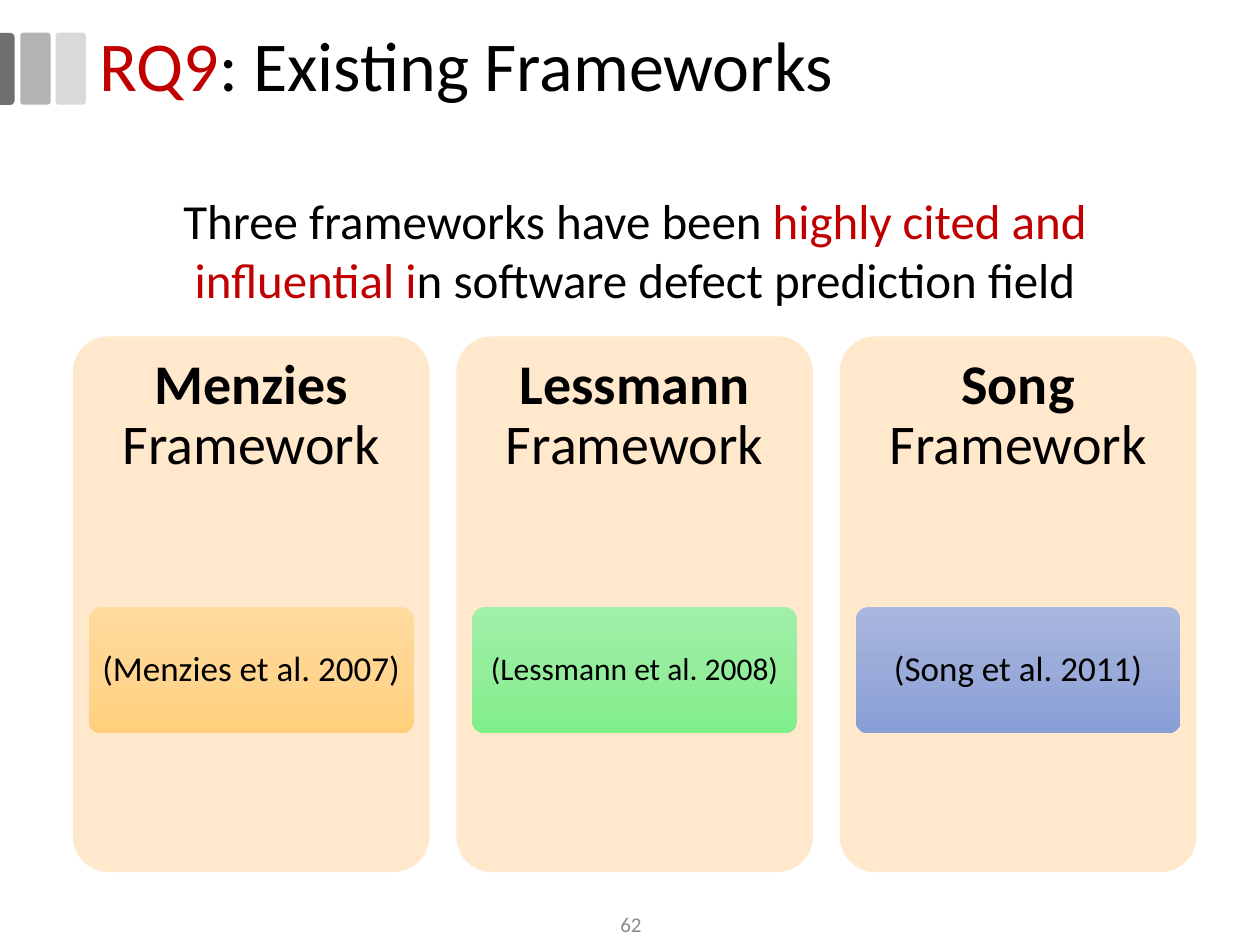
import copy

import pptx
import pptx.util
import pptx.dml.color
import pptx.enum.shapes
import pptx.enum.text
import pptx.oxml.ns

Cm = pptx.util.Cm
Pt = pptx.util.Pt
RGBColor = pptx.dml.color.RGBColor
SHAPE = pptx.enum.shapes.MSO_SHAPE
ALIGN = pptx.enum.text.PP_ALIGN
ANCHOR = pptx.enum.text.MSO_ANCHOR

FONT = "Calibri"
BLACK = RGBColor(0x00, 0x00, 0x00)
RED = RGBColor(0xC0, 0x00, 0x00)
PAGE_GREY = RGBColor(0x8C, 0x8C, 0x8C)
LIGHT_GREY = RGBColor(0xD9, 0xD9, 0xD9)
MID_GREY = RGBColor(0xB3, 0xB3, 0xB3)
DARK_GREY = RGBColor(0x70, 0x70, 0x70)
CREAM = RGBColor(0xFF, 0xE8, 0xCC)
ORANGES = [RGBColor(0xFF, 0xDB, 0x9E), RGBColor(0xFF, 0xD5, 0x90), RGBColor(0xFF, 0xD0, 0x7C)]
GREENS = [RGBColor(0xA1, 0xF0, 0xA9), RGBColor(0x93, 0xED, 0x9B), RGBColor(0x7F, 0xEF, 0x89)]
BLUES = [RGBColor(0xA8, 0xB7, 0xDF), RGBColor(0x9A, 0xAB, 0xD9), RGBColor(0x88, 0x9E, 0xD7)]

# Author, citation, citation size, gradient
FRAMEWORKS = [
    ("Menzies", "(Menzies et al. 2007)", 20, ORANGES),
    ("Lessmann", "(Lessmann et al. 2008)", 18, GREENS),
    ("Song", "(Song et al. 2011)", 20, BLUES),
]
CARD_LEFT, CARD_TOP, CARD_WIDTH, CARD_HEIGHT = 1.47, 6.78, 7.19, 10.8
CARD_PITCH = 7.73
CITATION_INSET, CITATION_TOP, CITATION_HEIGHT = 0.32, 12.24, 2.54


def add_block(slide, preset, left, top, width, height, adjustments, color=None):
    """Add a borderless preset shape, filled if a colour is given."""
    block = slide.shapes.add_shape(preset, Cm(left), Cm(top), Cm(width), Cm(height))
    block.shadow.inherit = False
    block.line.fill.background()
    for index, value in enumerate(adjustments):
        block.adjustments[index] = value
    if color is not None:
        block.fill.solid()
        block.fill.fore_color.rgb = color
    return block


def fill_gradient(block, colors):
    """Fill from top to bottom through three evenly spaced colours."""
    block.fill.gradient()
    block.fill.gradient_angle = 270
    first_stop = block._element.spPr.find(".//" + pptx.oxml.ns.qn("a:gs"))
    first_stop.addnext(copy.deepcopy(first_stop))
    for index, (stop, color) in enumerate(zip(block.fill.gradient_stops, colors)):
        stop.position = index / 2
        stop.color.rgb = color


def write_text(holder, runs, size, align=ALIGN.CENTER, anchor=ANCHOR.MIDDLE,
               spacing=None, insets=(0.25, 0.13)):
    """Write one paragraph; each run is (text, colour, bold)."""
    frame = holder.text_frame
    frame.word_wrap = True
    frame.auto_size = pptx.enum.text.MSO_AUTO_SIZE.NONE
    frame.vertical_anchor = anchor
    frame.margin_left = frame.margin_right = Cm(insets[0])
    frame.margin_top = frame.margin_bottom = Cm(insets[1])
    paragraph = frame.paragraphs[0]
    paragraph.alignment = align
    paragraph.line_spacing = spacing
    paragraph.font.name = FONT
    paragraph.font.size = Pt(size)
    for text, color, bold in runs:
        run = paragraph.add_run()
        run.text = text
        run.font.color.rgb = color
        run.font.bold = bold


def add_label(slide, left, top, width, height, runs, size, **layout):
    label = slide.shapes.add_textbox(Cm(left), Cm(top), Cm(width), Cm(height))
    write_text(label, runs, size, **layout)


def add_title_bars(slide):
    for left, color in ((1.12, LIGHT_GREY), (0.41, MID_GREY)):
        add_block(slide, SHAPE.ROUNDED_RECTANGLE, left, 0.66, 0.61, 1.45, [0.1], color)
    edge_bar = add_block(slide, SHAPE.ROUND_2_SAME_RECTANGLE,
                         -0.58, 1.24, 1.45, 0.3, [0.29, 0], DARK_GREY)
    edge_bar.rotation = 90


def add_title(slide):
    title = slide.shapes.title
    title.left, title.top, title.width, title.height = Cm(1.75), Cm(0.43), Cm(23.62), Cm(1.9)
    write_text(title, [("RQ9", RED, False), (": Existing Frameworks", BLACK, False)],
               40, align=ALIGN.LEFT, spacing=0.9)


def add_framework(slide, left, author, citation, citation_size, colors):
    add_block(slide, SHAPE.ROUNDED_RECTANGLE, left, CARD_TOP,
              CARD_WIDTH, CARD_HEIGHT, [0.1], CREAM)
    add_label(slide, left, CARD_TOP, CARD_WIDTH, 3.23,
              [(author, BLACK, True), (" Framework", BLACK, False)], 32,
              spacing=0.9, insets=(0.33, 0.33))
    citation_box = add_block(slide, SHAPE.ROUNDED_RECTANGLE, left + CITATION_INSET,
                             CITATION_TOP, CARD_WIDTH - 2 * CITATION_INSET,
                             CITATION_HEIGHT, [0.1])
    fill_gradient(citation_box, colors)
    write_text(citation_box, [(citation, BLACK, False)], citation_size,
               spacing=0.9, insets=(0.15, 0.1))


def main():
    deck = pptx.Presentation()
    deck.slide_width, deck.slide_height = Cm(25.4), Cm(19.05)
    slide = deck.slides.add_slide(deck.slide_layouts[5])

    # Heading
    add_title_bars(slide)
    add_title(slide)

    # Framework cards
    for index, framework in enumerate(FRAMEWORKS):
        add_framework(slide, CARD_LEFT + index * CARD_PITCH, *framework)

    # Lead sentence
    add_label(slide, CARD_LEFT, 3.71, 22.66, 2.64,
              [("Three frameworks have been ", BLACK, False),
               ("highly cited and influential i", RED, False),
               ("n software defect prediction field", BLACK, False)],
              28, anchor=ANCHOR.TOP)

    # Page number
    add_label(slide, 9.86, 18.21, 5.72, 0.84, [("62", PAGE_GREY, False)], 12)

    deck.save("out.pptx")


if __name__ == "__main__":
    main()
